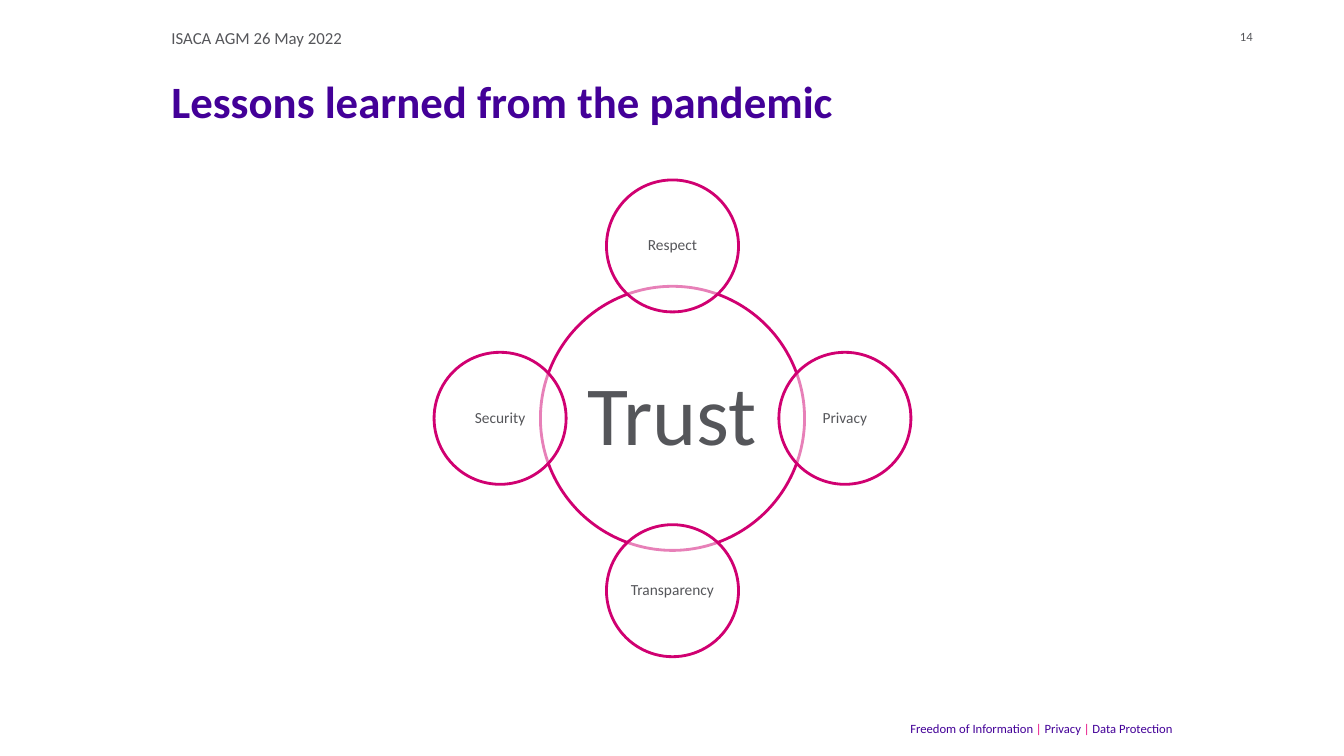
from lxml import etree
from pptx import Presentation
from pptx.dml.color import RGBColor
from pptx.enum import shapes, text
from pptx.oxml import ns
from pptx.util import Inches, Pt

COLORS = {"purple": "430098", "pink": "E5007D", "ring": "D00071",
          "gray": "55565A", "white": "FFFFFF"}


def color(name):
    return RGBColor.from_string(COLORS[name])


def format_text(shape, size, color_name, margins, align=text.PP_ALIGN.LEFT,
                anchor=text.MSO_ANCHOR.TOP, wrap=True):
    """Format a one-paragraph shape; margins are (horizontal, vertical) inches."""
    frame = shape.text_frame
    frame.auto_size = text.MSO_AUTO_SIZE.NONE
    frame.word_wrap = wrap
    frame.vertical_anchor = anchor
    frame.margin_left = frame.margin_right = Inches(margins[0])
    frame.margin_top = frame.margin_bottom = Inches(margins[1])
    paragraph = frame.paragraphs[0]
    paragraph.alignment = align
    paragraph.space_before = Pt(0)
    paragraph.font.name = "Calibri"
    paragraph.font.size = Pt(size)
    paragraph.font.color.rgb = color(color_name)
    return paragraph


presentation = Presentation()
presentation.slide_width = Inches(13.33)
presentation.slide_height = Inches(7.5)
slide = presentation.slides.add_slide(presentation.slide_layouts[1])

# Title and event line
title, event = slide.shapes.title, slide.placeholders[1]
for placeholder, wording, top, height in (
        (title, "Lessons learned from the pandemic", 0.68, 0.61),
        (event, "ISACA AGM 26 May 2022", 0.22, 0.28)):
    placeholder.left, placeholder.top = Inches(1.7), Inches(top)
    placeholder.width, placeholder.height = Inches(9.92), Inches(height)
    placeholder.text_frame.text = wording

properties = event.text_frame.paragraphs[0]._p.get_or_add_pPr()
properties.set("marL", "0")
properties.set("indent", "0")
etree.SubElement(properties, ns.qn("a:buNone"))
format_text(title, 32, "purple", (0, 0.05)).font.bold = True
format_text(event, 12, "gray", (0, 0.05))

# Page number and footer
page_number = slide.shapes.add_textbox(Inches(12.2), Inches(0.24), Inches(0.35), Inches(0.25))
page_number.text_frame.text = "14"
format_text(page_number, 9, "gray", (0.1, 0.05), wrap=False)

footer = slide.shapes.add_textbox(Inches(9.03), Inches(7.1), Inches(3.57), Inches(0.25))
footer_line = format_text(footer, 9, "purple", (0, 0.05))
for wording, color_name in (("Freedom of Information ", "purple"), ("|", "pink"),
                            (" Privacy ", "purple"), ("| ", "pink"),
                            ("Data Protection", "purple")):
    run = footer_line.add_run()
    run.text = wording
    run.font.color.rgb = color(color_name)

# Trust circle with four values around it
CENTER_X, CENTER_Y, ORBIT = 6.67, 4.15, 1.71
for label, step_x, step_y, diameter, size, margin in (
        ("Trust", 0, 0, 2.62, 60, 0.08),
        ("Respect", 0, -1, 1.31, 11, 0.02),
        ("Privacy", 1, 0, 1.31, 11, 0.02),
        ("Transparency", 0, 1, 1.31, 11, 0.02),
        ("Security", -1, 0, 1.31, 11, 0.02)):
    circle = slide.shapes.add_shape(
        shapes.MSO_SHAPE.OVAL,
        Inches(CENTER_X + step_x * ORBIT - diameter / 2),
        Inches(CENTER_Y + step_y * ORBIT - diameter / 2),
        Inches(diameter), Inches(diameter))
    circle.shadow.inherit = False
    circle.fill.solid()
    circle.fill.fore_color.rgb = color("white")
    fill_color = circle._element.spPr.find(".//" + ns.qn("a:srgbClr"))
    etree.SubElement(fill_color, ns.qn("a:alpha"), val="50000")
    circle.line.color.rgb = color("ring")
    circle.line.width = Pt(2)
    circle.text_frame.text = label
    paragraph = format_text(circle, size, "gray", (margin, margin), text.PP_ALIGN.CENTER,
                            text.MSO_ANCHOR.MIDDLE, wrap=False)
    paragraph.line_spacing = 0.9

presentation.save("out.pptx")
